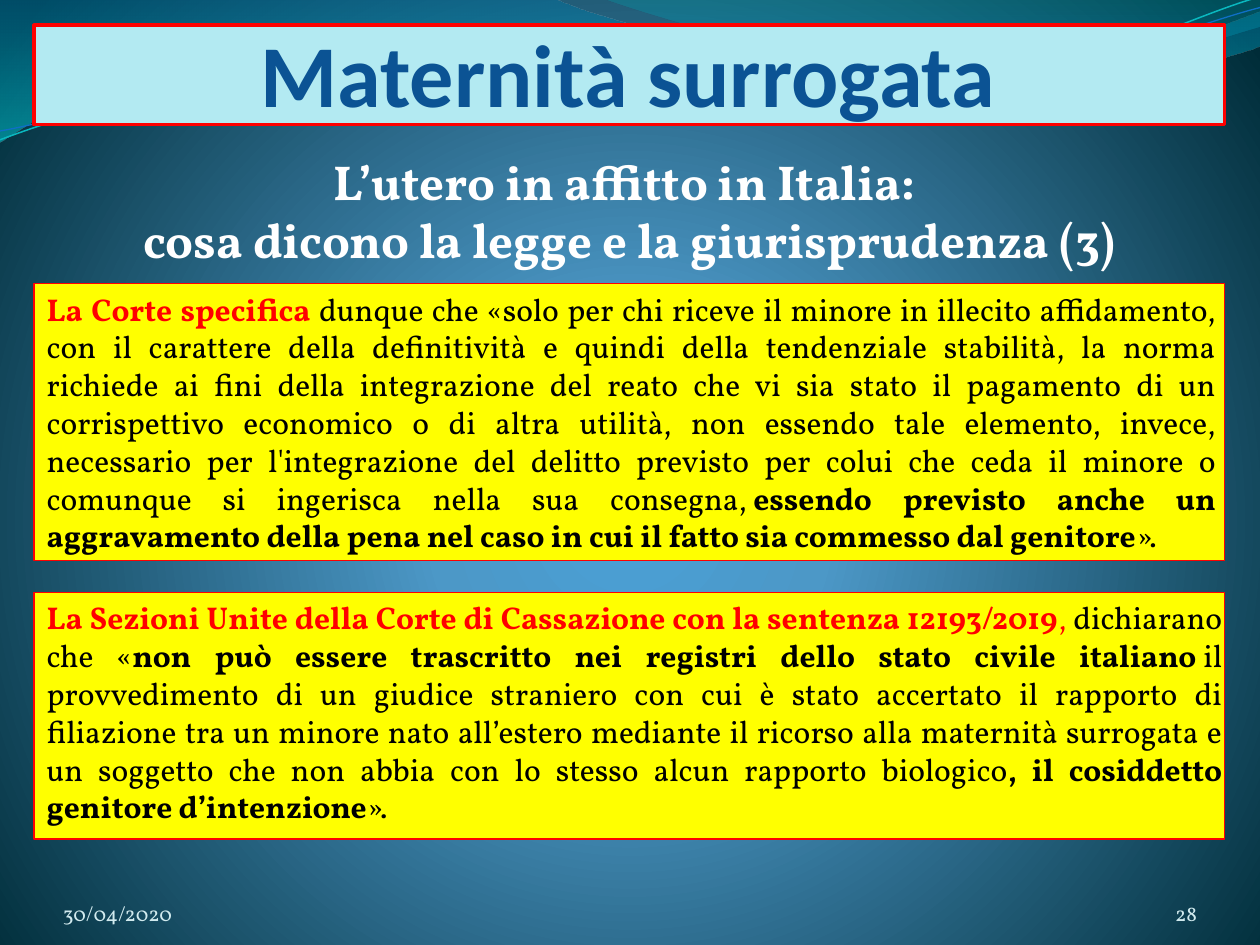
from lxml import etree
from pptx import Presentation
from pptx.dml.color import RGBColor
from pptx.enum.shapes import MSO_SHAPE
from pptx.enum.text import MSO_ANCHOR, PP_ALIGN
from pptx.oxml.ns import nsdecls, qn
from pptx.util import Inches, Pt

RECTANGLE = MSO_SHAPE.RECTANGLE
TOP, BOTTOM = MSO_ANCHOR.TOP, MSO_ANCHOR.BOTTOM
LEFT, CENTER, RIGHT, JUSTIFY = PP_ALIGN.LEFT, PP_ALIGN.CENTER, PP_ALIGN.RIGHT, PP_ALIGN.JUSTIFY

COLORS = {
    "glow": "4AA0D6", "middle": "4C98C7", "edge": "002C38",
    "wave_blue": "0074A1", "wave_cyan": "00C6CF",
    "wave_teal": "00A1A9", "wave_sky": "008BBF",
    "line_cyan": "0AB8BF", "line_blue": "0F6FC6",
    "title_fill": "B3EAF2", "title": "0B5394",
    "red": "FF0000", "yellow": "FFFF00", "black": "000000",
    "white": "FFFFFF", "footer": "D1EAEE",
}
SERIF, SANS = "Vollkorn", "Calibri"
MARGIN, CONTENT_WIDTH = 0.27, 9.45
HARD_SPACE = chr(160)

RULING = [
    ("La Corte specifica ", "red", True),
    ("dunque che «solo per chi riceve il minore in illecito affidamento, con il carattere "
     "della definitività e quindi della tendenziale stabilità, la norma richiede ai fini della "
     "integrazione del reato che vi sia stato il pagamento di un corrispettivo economico o di "
     "altra utilità, non essendo tale elemento, invece, necessario per l'integrazione del "
     "delitto previsto per colui che ceda il minore o comunque si ingerisca nella sua "
     "consegna," + HARD_SPACE, "black", False),
    ("essendo previsto anche un aggravamento della pena nel caso in cui il fatto sia "
     "commesso dal genitore", "black", True),
    ("».", "black", False),
]
JUDGMENT = [
    ("La Sezioni Unite della Corte di Cassazione con la sentenza 12193/2019", "red", True),
    (", ", "red", False),
    ("dichiarano che «", "black", False),
    ("non può essere trascritto nei registri dello stato civile italiano" + HARD_SPACE,
     "black", True),
    ("il provvedimento di un giudice straniero con cui è stato accertato il rapporto di "
     "filiazione tra un minore nato all’estero mediante il ricorso alla maternità surrogata e "
     "un soggetto che non abbia con lo stesso alcun rapporto biologico", "black", False),
    (", il cosiddetto genitore d’intenzione", "black", True),
    ("».", "black", False),
]


def gradient_xml(stops, direction):
    stop_xml = "".join(
        f'<a:gs pos="{position * 1000}"><a:srgbClr val="{COLORS[color]}">'
        f'<a:alpha val="{alpha * 1000}"/></a:srgbClr></a:gs>'
        for position, color, alpha in stops)
    return (f'<a:gradFill {nsdecls("a")} rotWithShape="1"><a:gsLst>{stop_xml}</a:gsLst>'
            f'{direction}</a:gradFill>')


def set_gradient(fill, parent, stops, direction):
    fill.gradient()
    gradient = next(parent.iter(qn("a:gradFill")))
    gradient.getparent().replace(gradient, etree.fromstring(gradient_xml(stops, direction)))


def write_text(shape, paragraphs, size=18, font=SERIF, align=LEFT, anchor=TOP,
               insets=(0, 0, 0, 0), indent=0, space_before=0):
    frame = shape.text_frame
    frame.word_wrap = True
    frame.vertical_anchor = anchor
    (frame.margin_left, frame.margin_top,
     frame.margin_right, frame.margin_bottom) = map(Inches, insets)
    for index, runs in enumerate(paragraphs):
        paragraph = frame.add_paragraph() if index else frame.paragraphs[0]
        paragraph.alignment = align
        paragraph.space_before = Pt(space_before)
        if indent:
            properties = paragraph._p.get_or_add_pPr()
            properties.set("marL", str(Inches(indent)))
            properties.set("indent", "0")
        for text, color, bold in runs:
            run = paragraph.add_run()
            run.text = text
            run.font.name = font
            run.font.size = Pt(size)
            run.font.bold = bold
            run.font.color.rgb = RGBColor.from_string(COLORS[color])


def add_panel(slide, box, fill, line_width):
    shape = slide.shapes.add_shape(RECTANGLE, *map(Inches, box))
    shape.shadow.inherit = False
    shape.fill.solid()
    shape.fill.fore_color.rgb = RGBColor.from_string(COLORS[fill])
    shape.line.color.rgb = RGBColor.from_string(COLORS["red"])
    shape.line.width = Pt(line_width)
    return shape


def add_text_box(slide, box, paragraphs, **text_format):
    write_text(slide.shapes.add_textbox(*map(Inches, box)), paragraphs, **text_format)


def add_wave(slide, start, segments, closed):
    points = [(Inches(x), Inches(y)) for segment in segments for x, y in segment]
    builder = slide.shapes.build_freeform(*map(Inches, start), scale=1.0)
    builder.add_line_segments(points, close=closed)
    shape = builder.convert_to_shape()
    shape.shadow.inherit = False
    lines = iter(list(shape._element.iter(qn("a:lnTo"))))
    for segment in segments:
        group = [next(lines) for _ in segment]
        if len(group) == 3:
            curve = etree.Element(qn("a:cubicBezTo"))
            group[0].addprevious(curve)
            for line in group:
                curve.append(line[0])
                line.getparent().remove(line)
    return shape


def add_filled_wave(slide, start, segments, stops):
    shape = add_wave(slide, start, segments, True)
    shape.line.fill.background()
    set_gradient(shape.fill, shape._element.spPr, stops, '<a:lin ang="5400000" scaled="1"/>')


def add_line_wave(slide, start, segments, color, width):
    shape = add_wave(slide, start, segments, False)
    shape.fill.background()
    shape.line.color.rgb = RGBColor.from_string(COLORS[color])
    shape.line.width = Pt(width)


def add_backdrop(slide):
    set_gradient(slide.background.fill, slide._element,
                 [(0, "glow", 100), (25, "middle", 100), (100, "edge", 100)],
                 '<a:path path="circle"><a:fillToRect l="10000" t="110000" '
                 'r="10000" b="100000"/></a:path>')
    add_filled_wave(slide, (0, 0), [
        [(4.4, -0.01)],
        [(4.76, 0.17), (6.64, 0.63), (7.58, 0.63)],
        [(8.53, 0.63), (9.58, 0.26), (10, 0.09)],
        [(10.01, 0.36)],
        [(9.83, 0.44), (8.7, 0.76), (7.46, 0.75)],
        [(6.22, 0.75), (3.82, 0.28), (2.57, 0.34)],
        [(1.29, 0.36), (0.46, 0.83), (-0.01, 1.13)],
    ], [(0, "wave_blue", 45), (100, "wave_cyan", 55)])
    add_filled_wave(slide, (4.79, -0.01), [
        [(5.09, 0.11), (6.82, 0.62), (7.69, 0.65)],
        [(8.56, 0.69), (9.61, 0.32), (10, 0.21)],
        [(10, 0)],
    ], [(0, "wave_teal", 30), (80, "wave_sky", 45)])
    add_line_wave(slide, (0, 1.11), [
        [(0.48, 0.93), (1.58, 0.57), (2.77, 0.52)],
        [(3.95, 0.47), (5.93, 0.89), (7.13, 0.8)],
        [(8.33, 0.71), (9.38, 0.15), (9.98, -0.02)],
    ], "line_cyan", 0.85)
    add_line_wave(slide, (0, 1.04), [
        [(0.47, 0.96), (1.64, 0.61), (2.83, 0.56)],
        [(4.03, 0.51), (5.97, 0.84), (7.17, 0.75)],
        [(8.36, 0.67), (9.41, 0.21), (10, 0.06)],
    ], "line_blue", 0.75)


def add_heading(slide, title_box, subtitle_box):
    title = add_panel(slide, title_box, "title_fill", 2)
    write_text(title, [[("Maternità surrogata", "title", True)]], size=50.4, font=SANS,
               align=CENTER, anchor=BOTTOM, insets=(0, 0, 0.02, 0))
    add_text_box(slide, subtitle_box, [
        [("L’utero in affitto in Italia: ", "white", True)],
        [("cosa dicono la legge e la giurisprudenza (3)", "white", True)],
    ], size=28, align=CENTER, insets=(0.1, 0.05, 0.1, 0.05))


def add_quote(slide, box, runs, right_inset, space_before=0):
    write_text(add_panel(slide, box, "yellow", 0.75), [runs], align=JUSTIFY,
               insets=(0, 0.05, right_inset, 0.05), indent=0.1, space_before=space_before)


def add_footer(slide, date_box, number_box):
    for box, text, align in ((date_box, "30/04/2020", LEFT), (number_box, "28", RIGHT)):
        add_text_box(slide, box, [[(text, "footer", False)]], size=12, align=align, anchor=BOTTOM)


def main():
    presentation = Presentation()
    presentation.slide_width, presentation.slide_height = Inches(10), Inches(7.5)
    slide = presentation.slides.add_slide(presentation.slide_layouts[6])
    add_backdrop(slide)
    add_heading(slide, (MARGIN, 0.2, CONTENT_WIDTH, 0.79), (MARGIN, 1.15, CONTENT_WIDTH, 1.04))
    add_quote(slide, (MARGIN, 2.25, CONTENT_WIDTH, 2.2), RULING, 0.07, space_before=3.6)
    add_quote(slide, (MARGIN, 4.7, CONTENT_WIDTH, 1.96), JUDGMENT, 0.02)
    add_footer(slide, (0.5, 6.95, 2.33, 0.4), (8.67, 6.95, 0.83, 0.4))
    presentation.save("out.pptx")


if __name__ == "__main__":
    main()
